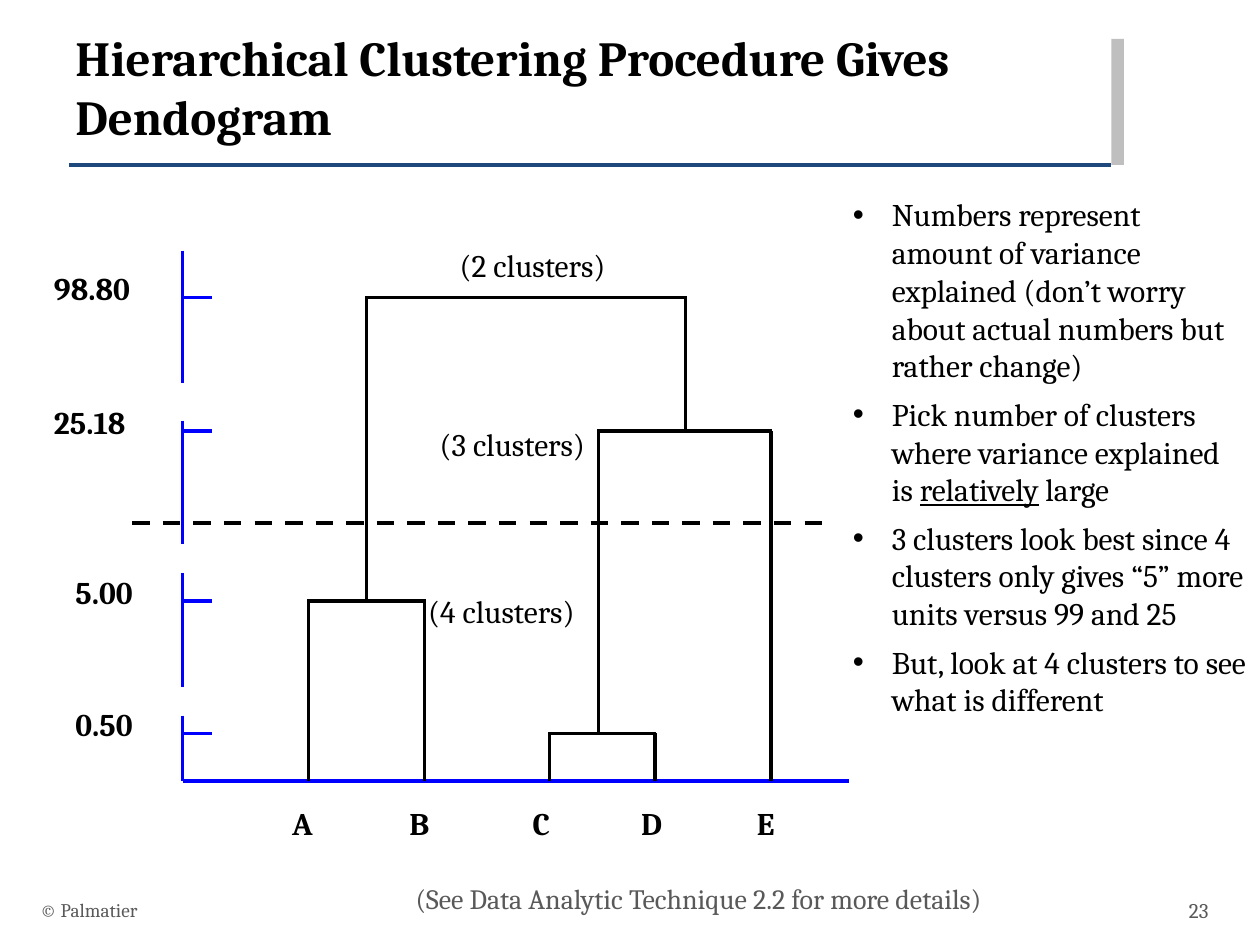
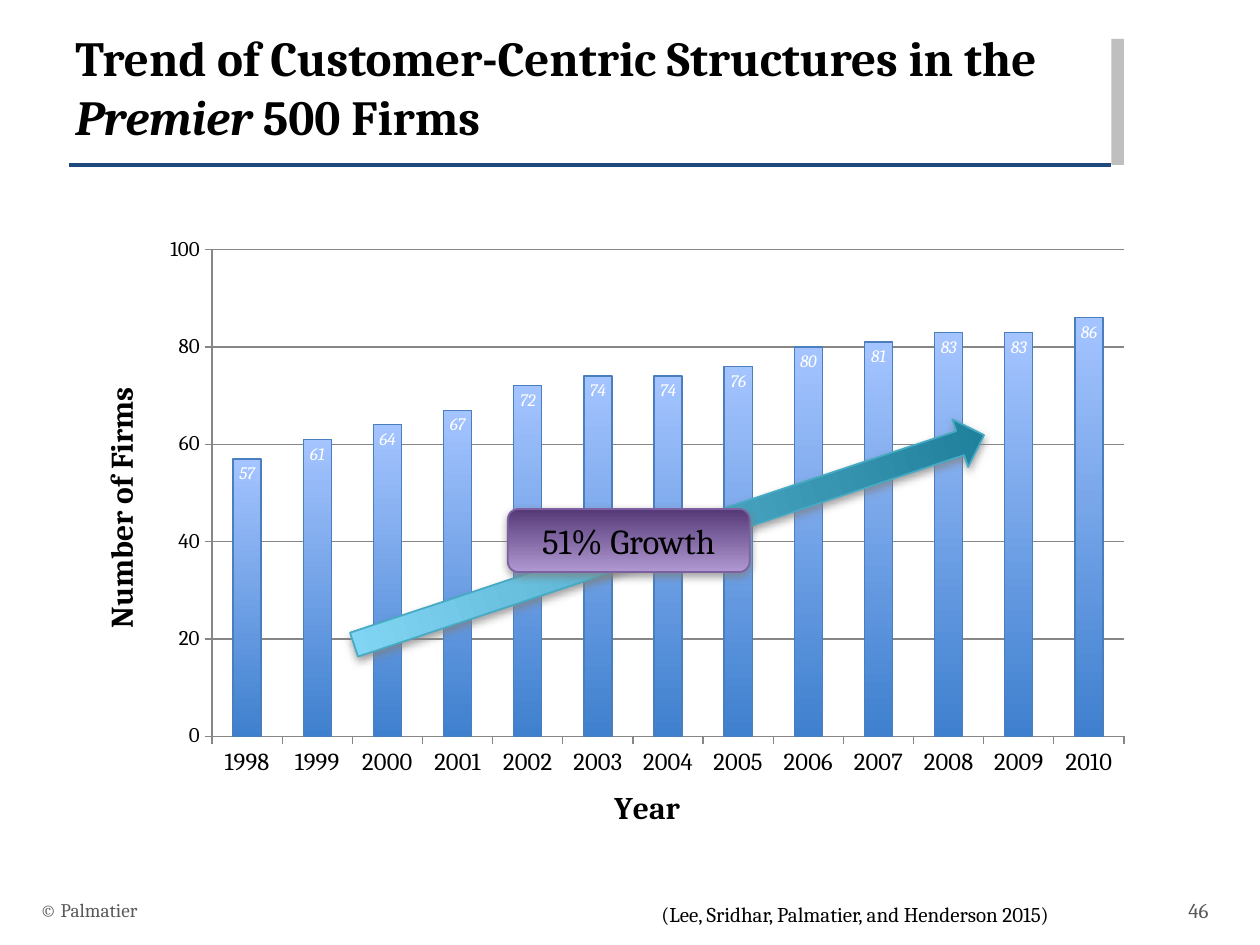
from dataclasses import dataclass

from lxml.etree import SubElement
from pptx import Presentation
from pptx.chart.data import CategoryChartData
from pptx.dml.color import RGBColor
from pptx.enum.chart import XL_CHART_TYPE, XL_LABEL_POSITION, XL_TICK_MARK
from pptx.enum.dml import MSO_LINE
from pptx.enum.shapes import MSO_CONNECTOR, MSO_SHAPE
from pptx.enum.text import MSO_ANCHOR, PP_ALIGN
from pptx.oxml import parse_xml
from pptx.oxml.ns import nsdecls, qn
from pptx.util import Emu, Inches, Pt


@dataclass(frozen=True)
class Theme:
    font: str = "Cambria"
    black: str = "000000"
    white: str = "FFFFFF"
    muted: str = "595959"
    band: str = "BFBFBF"
    rule: str = "1F497D"
    axis: str = "0000FF"
    grid: str = "868686"
    bar: tuple = ("3F80CE", "A4C4FF")
    bar_line: str = "4B7EBC"
    arrow: tuple = ("1E7F9A", "83D7F6")
    arrow_line: str = "46AAC5"
    badge: tuple = ("553977", "B099D2")
    badge_line: str = "7D60A0"
    title: int = 28
    callout: int = 20
    body: int = 18
    note: int = 16
    category: int = 14
    small: int = 12
    copyright: int = 11
    label: int = 10


theme = Theme()
presentation = Presentation()
presentation.slide_width, presentation.slide_height = Inches(10), Inches(7.5)

# The grid has 100 columns by 75 rows of square cells
CELL = presentation.slide_width / 100


def grid(*cells):
    return [Emu(round(CELL * cell)) for cell in cells]


def add_text(slide, place, paragraphs, size, color=theme.black, bold=False,
             emphasis="italic", align=PP_ALIGN.LEFT, anchor=MSO_ANCHOR.TOP, bullet=False):
    """Add a text box; words between underscores get the emphasis."""
    shape = slide.shapes.add_textbox(*grid(*place))
    text_frame = shape.text_frame
    text_frame.word_wrap = True
    text_frame.vertical_anchor = anchor
    for number, text in enumerate(paragraphs):
        paragraph = text_frame.add_paragraph() if number else text_frame.paragraphs[0]
        paragraph.alignment = align
        if bullet:
            properties = paragraph._p.get_or_add_pPr()
            indent = grid(3.1)[0]
            properties.set("marL", str(indent))
            properties.set("indent", str(-indent))
            SubElement(properties, qn("a:buFont")).set("typeface", "Arial")
            SubElement(properties, qn("a:buChar")).set("char", "•")
            if number:
                paragraph.space_before = Pt(6)
        for index, piece in enumerate(text.split("_")):
            run = paragraph.add_run()
            run.text = piece
            run.font.name, run.font.size, run.font.bold = theme.font, Pt(size), bold
            run.font.color.rgb = RGBColor.from_string(color)
            if index % 2:
                setattr(run.font, emphasis, True)
    return shape


# Dendrogram geometry: heights of the merges and the branches that they join
BASE, AXIS = 62, 14.5
levels = {"98.80": 23.6, "25.18": 34.2, "5.00": 47.7, "0.50": 58.2}
top, upper, middle, low = levels.values()
merges = [  # left column, left foot, right column, right foot, height
    (24.5, BASE, 33.7, BASE, middle),
    (43.6, BASE, 52, BASE, low),
    (47.5, low, 61.2, BASE, upper),
    (29.1, middle, 54.4, upper, top),
]
title_rule = (5.5, 13.1, 88.2, 13.1, theme.rule, 2, None)
dendrogram_lines = [(AXIS, start, AXIS, end, theme.axis, 2, None)
                    for start, end in [(19.9, 30.4), (33.4, 43.2), (45.5, 54.5), (56.8, BASE)]]
dendrogram_lines.append((AXIS, BASE, 67.4, BASE, theme.axis, 2, None))
dendrogram_lines += [(AXIS, level, AXIS + 2.3, level, theme.axis, 2, None)
                     for level in levels.values()]
for left, left_foot, right, right_foot, height in merges:
    for ends in [(left, left_foot, left, height), (right, right_foot, right, height),
                 (left - 0.1, height, right + 0.1, height)]:
        dendrogram_lines.append((*ends, theme.black, 2, None))
dendrogram_lines.append((10.5, 41.5, 65.5, 41.5, theme.black, 2.5, MSO_LINE.DASH))

# Shared frame of both slides: band, rule, title and footer
slides = []
for title, number, lines in [
    ("Hierarchical Clustering Procedure Gives Dendogram", "23", dendrogram_lines),
    ("Trend of Customer-Centric Structures in the _Premier_ 500 Firms", "46", []),
]:
    slide = presentation.slides.add_slide(presentation.slide_layouts[6])
    slides.append(slide)
    band = slide.shapes.add_shape(MSO_SHAPE.RECTANGLE, *grid(88.2, 3.1, 1, 10))
    band.shadow.inherit = False
    band.fill.solid()
    band.fill.fore_color.rgb = RGBColor.from_string(theme.band)
    band.line.fill.background()
    for *ends, color, width, dash in [title_rule, *lines]:
        connector = slide.shapes.add_connector(MSO_CONNECTOR.STRAIGHT, *grid(*ends))
        connector.line.color.rgb = RGBColor.from_string(color)
        connector.line.width = Pt(width)
        connector.line.dash_style = dash
        SubElement(connector._element.spPr, qn("a:effectLst"))
    add_text(slide, (5, 1.7, 83.2, 10.9), [title], theme.title, bold=True)
    add_text(slide, (2.2, 70.2, 30, 4), ["© Palmatier"], theme.copyright, theme.muted,
             anchor=MSO_ANCHOR.MIDDLE)
    add_text(slide, (90.8, 70.2, 6.1, 4), [number], theme.small, theme.muted,
             align=PP_ALIGN.RIGHT, anchor=MSO_ANCHOR.MIDDLE)
dendrogram_slide, trend_slide = slides

# Dendrogram labels
for letter, left in zip("ABCDE", (22.2, 31.5, 41.3, 49.9, 59.1)):
    add_text(dendrogram_slide, (left, 63.3, 4.4, 5), [letter], theme.body, bold=True)
for value, level in levels.items():
    left = 3.3 if len(value) == 5 else 5
    shape = add_text(dendrogram_slide, (left, level - 2.5, 9.5, 4.8), [value],
                     theme.body, bold=True)
    shape.text_frame.paragraphs[0].line_spacing = 0.95
for count, left, row in [(2, 35.5, 19), (3, 33.9, 33.2), (4, 33, 46.5)]:
    add_text(dendrogram_slide, (left, row, 17.5, 4.2), [f"({count} clusters)"], theme.body)

# Dendrogram reading notes
add_text(dendrogram_slide, (66.7, 15, 33.3, 45.9), [
    "Numbers represent amount of variance explained (don’t worry about actual numbers "
    "but rather change)",
    "Pick number of clusters where variance explained is _relatively_ large",
    "3 clusters look best since 4 clusters only gives “5” more units versus 99 and 25",
    "But, look at 4 clusters to see what is different",
], theme.body, emphasis="underline", bullet=True)
add_text(dendrogram_slide, (32, 69.5, 51.3, 3.7),
         ["(See Data Analytic Technique 2.2 for more details)"], theme.note, theme.muted)

# Column chart
chart_data = CategoryChartData()
chart_data.categories = [str(year) for year in range(1998, 2011)]
chart_data.add_series("Series 1", (57, 61, 64, 67, 72, 74, 74, 76, 80, 81, 83, 83, 86))
chart = trend_slide.shapes.add_chart(XL_CHART_TYPE.COLUMN_STACKED,
                                     *grid(7.5, 17, 83.3, 49.4), chart_data).chart
chart.has_legend = chart.has_title = False
chart.font.name, chart.font.size = theme.font, Pt(theme.small)
chart.font.color.rgb = RGBColor.from_string(theme.black)
plot_area = chart._chartSpace.chart.plotArea
for layout in plot_area.findall(qn("c:layout")):
    plot_area.remove(layout)
plot_area.insert(0, parse_xml(
    f'<c:layout {nsdecls("c")}><c:manualLayout><c:layoutTarget val="inner"/>'
    '<c:xMode val="edge"/><c:yMode val="edge"/><c:x val="0.112"/><c:y val="0.057"/>'
    '<c:w val="0.869"/><c:h val="0.782"/></c:manualLayout></c:layout>'))

plot = chart.plots[0]
plot.gap_width, plot.overlap, plot.vary_by_categories = 150, 100, False
bars = plot.series[0].format
bars.line.color.rgb = RGBColor.from_string(theme.bar_line)
bars.line.width = Pt(0.75)
plot.has_data_labels = True
labels = plot.data_labels
labels.show_value, labels.position = True, XL_LABEL_POSITION.INSIDE_END
labels.font.name, labels.font.size, labels.font.italic = theme.font, Pt(theme.label), True
labels.font.color.rgb = RGBColor.from_string(theme.white)

# Chart axes
value_axis = chart.value_axis
value_axis.minimum_scale, value_axis.maximum_scale, value_axis.major_unit = 0, 100, 20
value_axis.has_major_gridlines = True
value_axis.major_gridlines.format.line.color.rgb = RGBColor.from_string(theme.grid)
for axis, title, size in [(chart.category_axis, "Year", theme.category),
                          (value_axis, "Number of Firms", theme.small)]:
    axis.major_tick_mark = XL_TICK_MARK.OUTSIDE
    axis.tick_labels.font.size = Pt(size)
    axis.format.line.color.rgb = RGBColor.from_string(theme.grid)
    paragraph = axis.axis_title.text_frame.paragraphs[0]
    paragraph.text = title
    font = paragraph.runs[0].font
    font.name, font.size, font.bold = theme.font, Pt(theme.body), True
    font.color.rgb = RGBColor.from_string(theme.black)
next(value_axis.axis_title._element.iter(qn("a:bodyPr"))).set("rot", "-5400000")

# Growth arrow and badge
arrow = trend_slide.shapes.add_shape(MSO_SHAPE.UP_ARROW, *grid(51.1, 16.5, 4, 52.7))
arrow.rotation = 71.6
badge = trend_slide.shapes.add_shape(MSO_SHAPE.ROUNDED_RECTANGLE, *grid(40.3, 40.4, 19.2, 5))
badge.text_frame.text = "51% Growth"
badge.text_frame.vertical_anchor = MSO_ANCHOR.MIDDLE
paragraph = badge.text_frame.paragraphs[0]
paragraph.alignment = PP_ALIGN.CENTER
font = paragraph.runs[0].font
font.name, font.size = theme.font, Pt(theme.callout)
font.color.rgb = RGBColor.from_string(theme.black)
for shape, color in [(arrow, theme.arrow_line), (badge, theme.badge_line)]:
    shape.line.color.rgb = RGBColor.from_string(color)
    shape.line.width = Pt(1)
    shape.shadow.inherit = False
    effects = shape._element.spPr.find(qn("a:effectLst"))
    effects.append(parse_xml(
        f'<a:outerShdw {nsdecls("a")} blurRad="{Pt(5)}" dist="{Pt(2)}" dir="5400000" '
        'rotWithShape="0"><a:srgbClr val="808080"><a:alpha val="75000"/></a:srgbClr>'
        '</a:outerShdw>'))

# Gradients of the bars, the arrow and the badge
for fill, colors, angle in [(bars.fill, theme.bar, 90), (arrow.fill, theme.arrow, 270),
                            (badge.fill, theme.badge, 270)]:
    fill.gradient()
    fill.gradient_angle = angle
    for stop, color in zip(fill.gradient_stops, colors):
        stop.color.rgb = RGBColor.from_string(color)

# Source of the trend
add_text(trend_slide, (51.5, 71.1, 45.9, 3),
         ["(Lee, Sridhar, Palmatier, and Henderson 2015)"], theme.small)

presentation.save("out.pptx")
